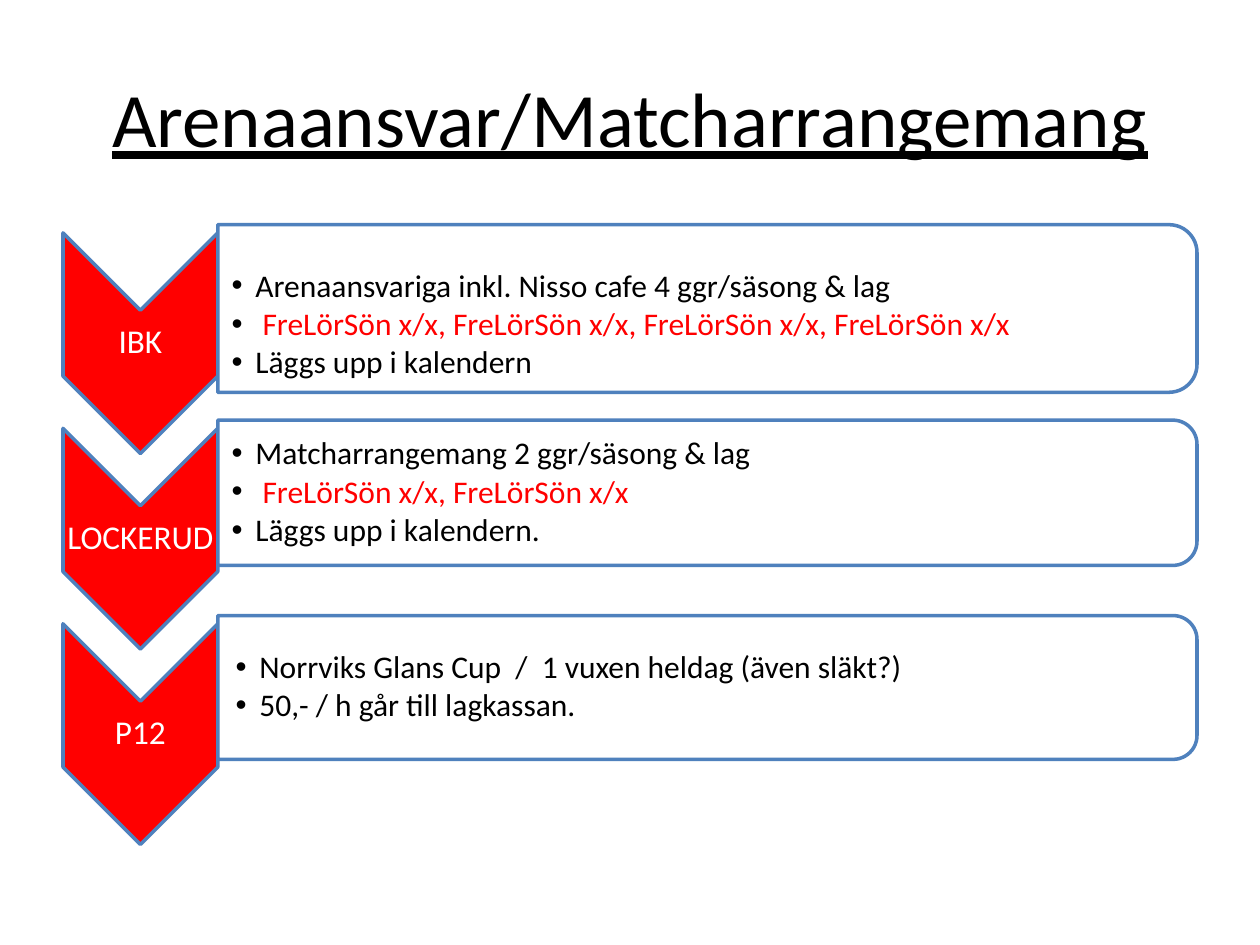
from dataclasses import dataclass

from lxml import etree
from pptx import Presentation
from pptx.dml.color import RGBColor
from pptx.enum.shapes import MSO_SHAPE
from pptx.enum.text import MSO_ANCHOR, PP_ALIGN
from pptx.oxml.ns import qn
from pptx.util import Cm, Pt

CHEVRON = MSO_SHAPE.CHEVRON
PANEL = MSO_SHAPE.ROUND_2_SAME_RECTANGLE
MIDDLE = MSO_ANCHOR.MIDDLE
CENTER, LEFT = PP_ALIGN.CENTER, PP_ALIGN.LEFT

TITLE = "Arenaansvar/Matcharrangemang"
# Bullets that start with a space are the dates still to be filled in.
ROWS = [
    {"label": "IBK", "height": 3.38, "inset_left": 0.28, "inset_top": 0.7,
     "bullets": ["Arenaansvariga inkl. Nisso cafe 4 ggr/säsong & lag",
                 " FreLörSön x/x, FreLörSön x/x, FreLörSön x/x, FreLörSön x/x",
                 "Läggs upp i kalendern"]},
    {"label": "LOCKERUD", "height": 2.93, "inset_left": 0.28, "inset_top": 0.03,
     "bullets": ["Matcharrangemang 2 ggr/säsong & lag",
                 " FreLörSön x/x, FreLörSön x/x",
                 "Läggs upp i kalendern."]},
    {"label": "P12", "height": 2.9, "inset_left": 0.36, "inset_top": 0.03,
     "bullets": ["Norrviks Glans Cup  /  1 vuxen heldag (även släkt?)",
                 "50,- / h går till lagkassan."]},
]


@dataclass(frozen=True)
class Theme:
    font: str = "Calibri"
    title_size: int = 44
    label_size: int = 19
    bullet_size: int = 18
    black: RGBColor = RGBColor(0, 0, 0)
    white: RGBColor = RGBColor(255, 255, 255)
    red: RGBColor = RGBColor(255, 0, 0)
    blue: RGBColor = RGBColor(0x4F, 0x81, 0xBD)


THEME = Theme()
ROW_PITCH = 3.94
FIRST_PANEL_TOP = 4.53
FIRST_CHEVRON_MIDDLE = 6.92
CHEVRON_LEFT, CHEVRON_WIDTH, CHEVRON_LENGTH = 1.27, 3.12, 4.45
PANEL_LEFT = CHEVRON_LEFT + CHEVRON_WIDTH
PANEL_WIDTH = 19.74
LABEL_HEIGHT = 1.35
BULLET_INDENT = 0.48


def add_turned_shape(slide, kind, left, top, width, height, fill):
    """Add a shape turned 90 degrees; the box given is the one seen on the slide."""
    shape = slide.shapes.add_shape(
        kind, Cm(left + (width - height) / 2), Cm(top + (height - width) / 2),
        Cm(height), Cm(width))
    shape.rotation = 90
    shape.shadow.inherit = False
    shape.fill.solid()
    shape.fill.fore_color.rgb = fill
    shape.line.color.rgb = THEME.blue
    shape.line.width = Pt(2)


def add_text(slide, box, lines, size, color, alignment, insets, line_spacing=0.9):
    """Add a text box; insets are left, top, right, bottom."""
    shape = slide.shapes.add_textbox(*map(Cm, box))
    text_frame = shape.text_frame
    text_frame.word_wrap = True
    text_frame.vertical_anchor = MIDDLE
    (text_frame.margin_left, text_frame.margin_top,
     text_frame.margin_right, text_frame.margin_bottom) = map(Cm, insets)
    text_frame.text = "\n".join(lines)
    for paragraph in text_frame.paragraphs:
        paragraph.alignment = alignment
        paragraph.line_spacing = line_spacing
        for run in paragraph.runs:
            run.font.name = THEME.font
            run.font.size = Pt(size)
            run.font.color.rgb = color
    return text_frame


def add_bullet(paragraph):
    properties = paragraph._p.get_or_add_pPr()
    properties.set("marL", str(Cm(BULLET_INDENT)))
    properties.set("indent", str(-Cm(BULLET_INDENT)))
    color = etree.SubElement(properties, qn("a:buClr"))
    etree.SubElement(color, qn("a:srgbClr"), val=str(THEME.black))
    etree.SubElement(properties, qn("a:buFont"), typeface="Arial")
    etree.SubElement(properties, qn("a:buChar"), char="•")


def add_row(slide, index, row):
    chevron_middle = FIRST_CHEVRON_MIDDLE + index * ROW_PITCH
    panel_top = FIRST_PANEL_TOP + index * ROW_PITCH
    add_turned_shape(slide, CHEVRON, CHEVRON_LEFT,
                     chevron_middle - CHEVRON_LENGTH / 2,
                     CHEVRON_WIDTH, CHEVRON_LENGTH, THEME.red)
    add_text(slide, (CHEVRON_LEFT, chevron_middle - LABEL_HEIGHT / 2,
                     CHEVRON_WIDTH, LABEL_HEIGHT),
             [row["label"]], THEME.label_size, THEME.white, CENTER, [0.03] * 4)

    add_turned_shape(slide, PANEL, PANEL_LEFT, panel_top,
                     PANEL_WIDTH, row["height"], THEME.white)
    text_frame = add_text(
        slide, (PANEL_LEFT, panel_top, PANEL_WIDTH, row["height"]),
        row["bullets"], THEME.bullet_size, THEME.black, LEFT,
        (row["inset_left"], row["inset_top"], 0.03, 0.03))
    for paragraph in text_frame.paragraphs:
        paragraph.space_after = Pt(2.4)
        add_bullet(paragraph)
        if paragraph.text.startswith(" "):
            paragraph.runs[0].font.color.rgb = THEME.red


def main():
    presentation = Presentation()
    presentation.slide_width, presentation.slide_height = Cm(25.4), Cm(19.05)
    slide = presentation.slides.add_slide(presentation.slide_layouts[6])
    title = add_text(slide, (1.27, 0.76, 22.86, 3.18), [TITLE], THEME.title_size,
                     THEME.black, CENTER, (0.25, 0.13, 0.25, 0.13), line_spacing=1.0)
    title.paragraphs[0].runs[0].font.underline = True
    for index, row in enumerate(ROWS):
        add_row(slide, index, row)
    presentation.save("out.pptx")


if __name__ == "__main__":
    main()
